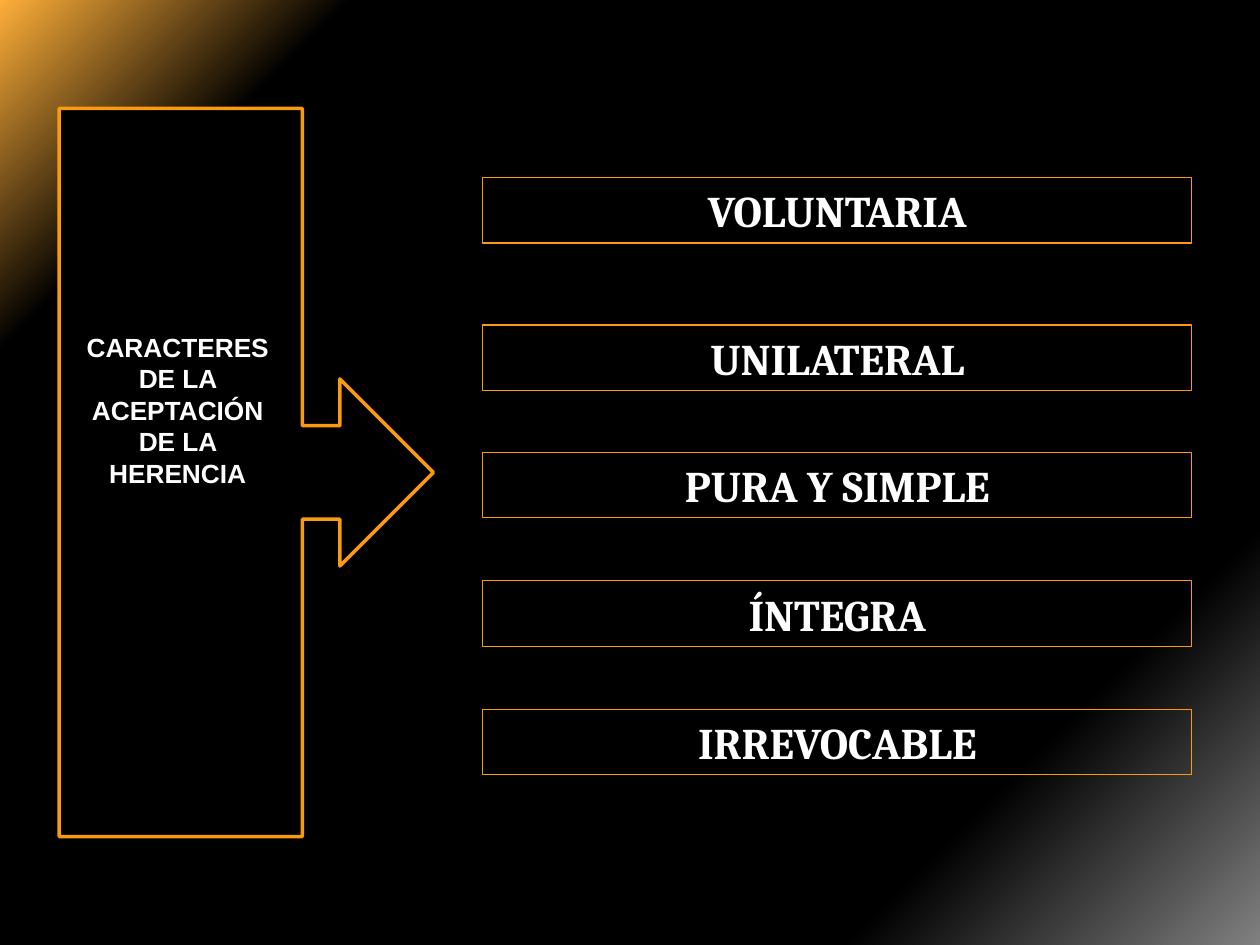
import pptx
import pptx.util
import pptx.dml.color
import pptx.enum.shapes
import pptx.enum.text
import pptx.oxml.ns
import lxml.etree

Inches = pptx.util.Inches
Pt = pptx.util.Pt
Shape = pptx.enum.shapes.MSO_SHAPE
qn = pptx.oxml.ns.qn
hues = {"gold": "F99A0F", "glow": "FFAF39", "black": "000000",
        "gray": "808080", "white": "FFFFFF"}


def tint(name):
    return pptx.dml.color.RGBColor.from_string(hues[name])


def write(shape, text, size, font):
    frame = shape.text_frame
    frame.word_wrap = True
    frame.text = text
    para = frame.paragraphs[0]
    para.alignment = pptx.enum.text.PP_ALIGN.CENTER
    para.font.size = Pt(size)
    para.font.name = font
    para.font.bold = True
    para.font.color.rgb = tint("white")


deck = pptx.Presentation()
deck.slide_width = Inches(10)
deck.slide_height = Inches(7.5)
slide = deck.slides.add_slide(deck.slide_layouts[6])

back = slide.background.fill
back.gradient()
back.gradient_angle = 315
stops = next(slide.element.iter(qn("a:gsLst")))
for stop in list(stops):
    stops.remove(stop)
for spot, name in [(0, "glow"), (16, "black"), (81, "black"), (100, "gray")]:
    stop = lxml.etree.SubElement(stops, qn("a:gs"), pos=str(spot * 1000))
    lxml.etree.SubElement(stop, qn("a:srgbClr"), val=hues[name])

arrow = slide.shapes.add_shape(
    Shape.RIGHT_ARROW_CALLOUT, Inches(0.47), Inches(0.86), Inches(2.97), Inches(5.78))
arrow.shadow.inherit = False
arrow.fill.solid()
arrow.fill.fore_color.rgb = tint("black")
arrow.line.color.rgb = tint("gold")
arrow.line.width = Pt(2)

label = slide.shapes.add_textbox(Inches(0.55), Inches(2.58), Inches(1.72), Inches(1.36))
write(label, "CARACTERES DE LA ACEPTACIÓN DE LA HERENCIA", 15, "Arial")

traits = [("VOLUNTARIA", 1.41), ("UNILATERAL", 2.58), ("PURA Y SIMPLE", 3.59),
          ("ÍNTEGRA", 4.61), ("IRREVOCABLE", 5.63)]
for text, top in traits:
    box = slide.shapes.add_shape(
        Shape.RECTANGLE, Inches(3.83), Inches(top), Inches(5.63), Inches(0.52))
    box.shadow.inherit = False
    box.fill.background()
    box.line.color.rgb = tint("gold")
    box.line.width = Pt(0.75)
    write(box, text, 25, "Cambria")

deck.save("out.pptx")
